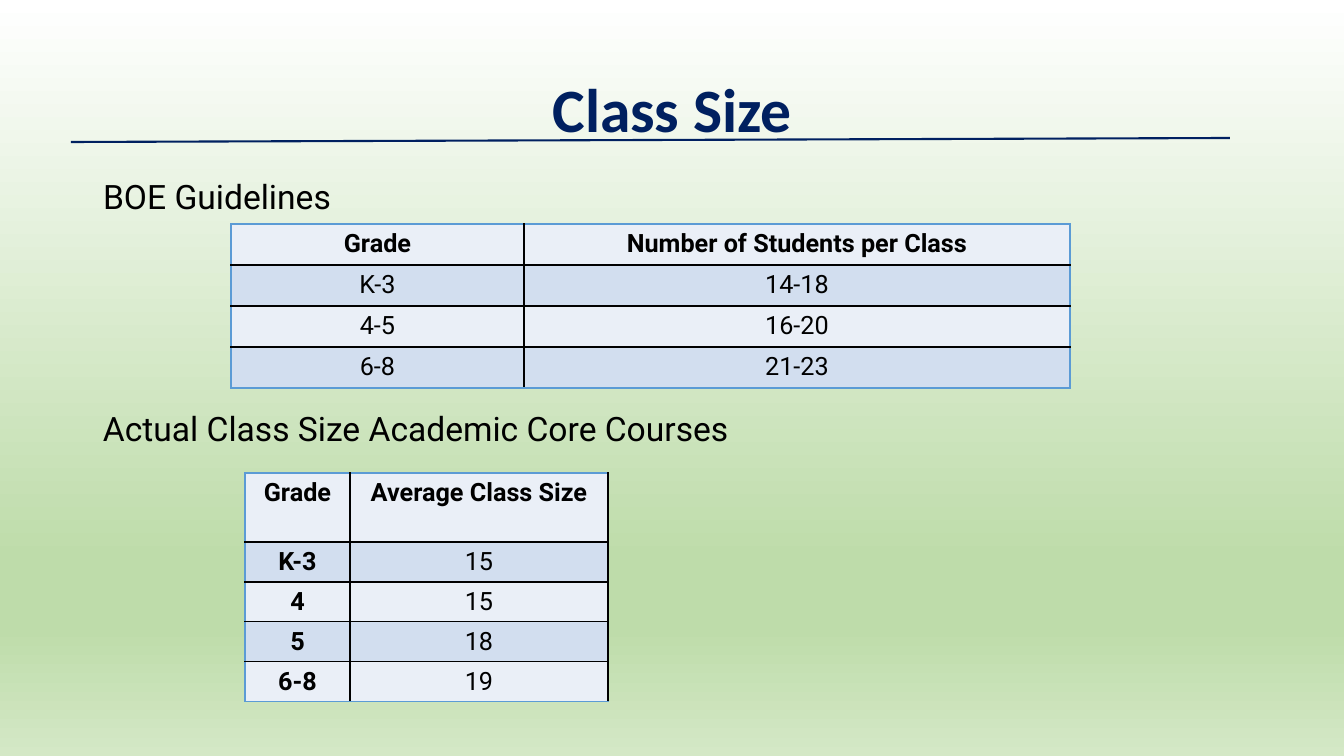
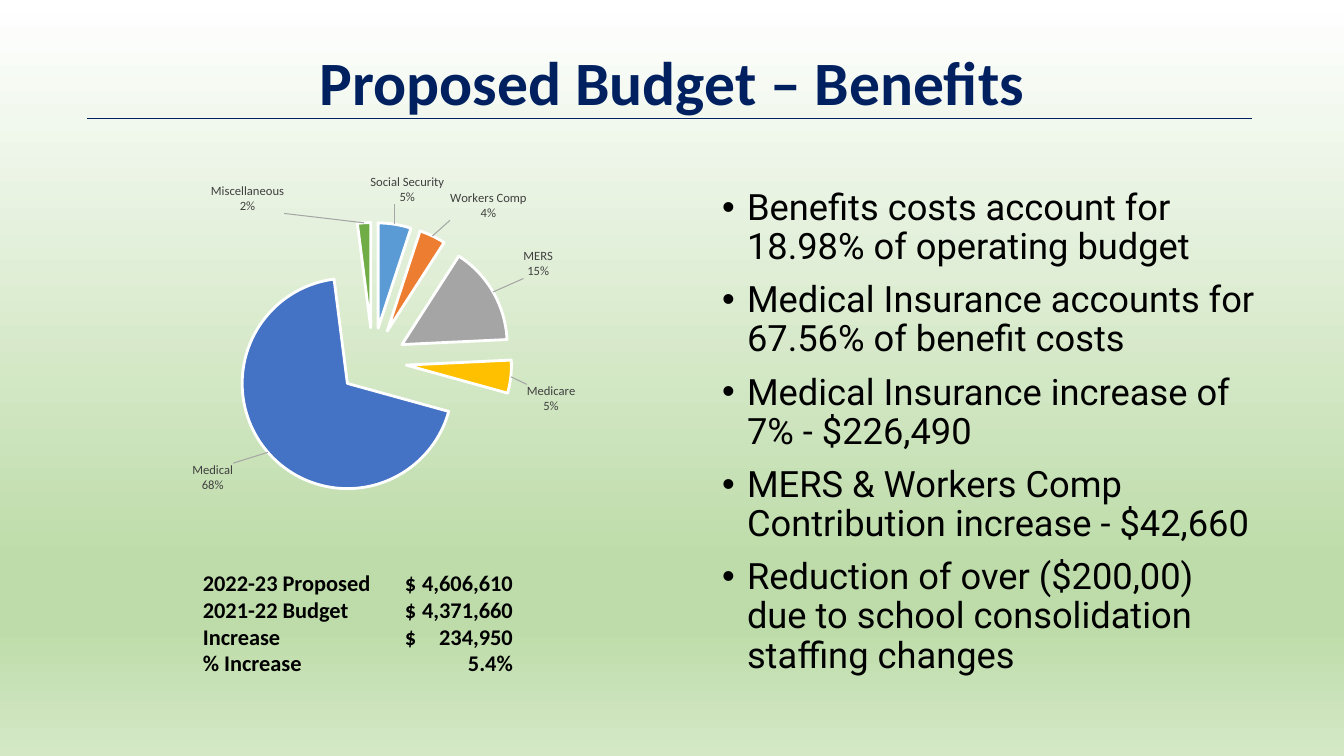
from copy import deepcopy
from dataclasses import dataclass
from typing import NamedTuple

from pptx import Presentation
from pptx.chart.data import CategoryChartData
from pptx.dml.color import RGBColor
from pptx.enum.chart import XL_CHART_TYPE as ChartType, XL_LABEL_POSITION as LabelPosition
from pptx.enum.shapes import MSO_CONNECTOR as Connector
from pptx.enum.text import MSO_ANCHOR as Anchor, MSO_AUTO_SIZE as AutoSize, PP_ALIGN as Align
from pptx.oxml import parse_xml
from pptx.oxml.ns import nsdecls, qn
from pptx.util import Pt

SLIDE_WIDTH, SLIDE_HEIGHT = 1344, 756
EMU_PER_PX = 12192000 / SLIDE_WIDTH


@dataclass(frozen=True)
class Theme:
    navy: str = "002060"
    black: str = "000000"
    white: str = "FFFFFF"
    label_gray: str = "404040"
    leader_gray: str = "A6A6A6"
    edge_blue: str = "5B9BD5"
    bands: tuple = ("EAEFF7", "D2DEEF")
    slices: tuple = ("5B9BD5", "ED7D31", "A5A5A5", "FFC000", "4472C4", "70AD47")
    backdrop: tuple = ((0, "FFFFFF"), (74, "BEDCAA"), (83, "BEDCAA"), (100, "D4E8C6"))
    heading_font: str = "Calibri"
    body_font: str = "Roboto"
    title_size: float = 44
    bullet_size: float = 25.9
    caption_size: float = 24
    table_size: float = 18
    summary_size: float = 16
    label_size: float = 9


THEME = Theme()


class Box(NamedTuple):
    left: int
    top: int
    width: int
    height: int


def px(length):
    return round(length * EMU_PER_PX)


def emu(box):
    return [px(length) for length in box]


def rgb(color):
    return RGBColor.from_string(color)


def element(tag, content="", **attributes):
    """Build one XML element of the a: or c: namespace."""
    listed = "".join(f' {name}="{value}"' for name, value in attributes.items())
    return parse_xml(f"<{tag} {nsdecls('a', 'c')}{listed}>{content}</{tag}>")


def solid(color):
    return f'<a:solidFill><a:srgbClr val="{color}"/></a:solidFill>'


def place(shape, box):
    shape.left, shape.top, shape.width, shape.height = emu(box)


def write(paragraph, text, size, font=THEME.body_font, color=THEME.black, bold=False,
          align=None, line_spacing=None, space_before=0):
    """Add text to a paragraph with its format."""
    paragraph.alignment = align
    paragraph.line_spacing = line_spacing
    paragraph.space_before = Pt(space_before)
    run = paragraph.add_run()
    run.text = text
    run.font.name, run.font.size, run.font.bold = font, Pt(size), bold
    run.font.color.rgb = rgb(color)


def paragraphs(frame, lines):
    """Pair each line with its paragraph in the frame."""
    for index, line in enumerate(lines):
        yield index, frame.paragraphs[0] if index == 0 else frame.add_paragraph(), line


# Shared parts

def set_backdrop(master):
    fill = master.background.fill
    fill.gradient()
    fill.gradient_angle = 270
    stops = master.element.find(".//" + qn("a:gsLst"))
    for stop in list(stops):
        stops.remove(stop)
    for percent, color in THEME.backdrop:
        stops.append(element("a:gs", f'<a:srgbClr val="{color}"/>', pos=percent * 1000))


def add_title(slide, box, text):
    title = slide.shapes.title
    place(title, box)
    title.text_frame.vertical_anchor = Anchor.MIDDLE
    title.text_frame.auto_size = AutoSize.NONE
    write(title.text_frame.paragraphs[0], text, THEME.title_size, font=THEME.heading_font,
          color=THEME.navy, bold=True, align=Align.CENTER, line_spacing=0.9)


def add_rule(slide, start, end, weight):
    rule = slide.shapes.add_connector(Connector.STRAIGHT, *emu(start + end))
    rule.line.color.rgb = rgb(THEME.navy)
    rule.line.width = Pt(weight)
    rule._element.spPr.append(element("a:effectLst"))


def fill_body(slide, box, lines, size, bulleted):
    body = slide.placeholders[1]
    place(body, box)
    body.text_frame.auto_size = AutoSize.NONE
    indent = px(25) if bulleted else 0
    for index, paragraph, line in paragraphs(body.text_frame, lines):
        properties = paragraph._p.get_or_add_pPr()
        properties.set("marL", str(indent))
        properties.set("indent", str(-indent))
        properties.append(element("a:buChar", char="•") if bulleted else element("a:buNone"))
        write(paragraph, line, size, line_spacing=0.9, space_before=10 if index else 0)


def add_text_box(slide, box):
    frame = slide.shapes.add_textbox(*emu(box)).text_frame
    frame.word_wrap = True
    return frame


# Tables

def set_borders(cell, colors):
    properties = cell._tc.get_or_add_tcPr()
    for index, (side, color) in enumerate(zip("LRTB", colors)):
        properties.insert(index, element(f"a:ln{side}", solid(color), w=Pt(1)))


def add_grid(slide, box, rows, widths, header_height, right_edge, bold_labels=False):
    """Draw a banded table with a bold header, black inner lines and a coloured outer edge."""
    last_row, last_column = len(rows) - 1, len(widths) - 1
    table = slide.shapes.add_table(len(rows), len(widths), *emu(box)).table
    table.horz_banding = False
    for column, width in zip(table.columns, widths):
        column.width = px(width)
    row_height = (box.height - header_height) / last_row
    for r, values in enumerate(rows):
        table.rows[r].height = px(row_height if r else header_height)
        for c, value in enumerate(values):
            cell = table.cell(r, c)
            cell.fill.solid()
            cell.fill.fore_color.rgb = rgb(THEME.bands[r % 2])
            set_borders(cell, (
                THEME.black if c else THEME.edge_blue,
                right_edge if c == last_column else THEME.black,
                THEME.black if r else THEME.edge_blue,
                THEME.edge_blue if r == last_row else THEME.black))
            write(cell.text_frame.paragraphs[0], value, THEME.table_size,
                  bold=r == 0 or (bold_labels and c == 0), align=Align.CENTER)


# Pie chart

def manual_layout(x, y, extra=""):
    return f'<c:manualLayout>{extra}<c:x val="{x:.2f}"/><c:y val="{y:.2f}"/>'


def add_pie(slide, box, plot, shares):
    """Draw an exploded pie; shares hold a name, a percentage and the label's shift."""
    data = CategoryChartData()
    data.categories = [name for name, _, _ in shares]
    data.add_series("Series 1", [value for _, value, _ in shares])
    chart = slide.shapes.add_chart(ChartType.PIE, *emu(box), data).chart
    chart.has_title = chart.has_legend = False
    chart.font.name, chart.font.size = THEME.heading_font, Pt(10)
    chart.plots[0].vary_by_categories = True

    # Plot area
    modes = ('<c:layoutTarget val="inner"/><c:xMode val="edge"/><c:yMode val="edge"/>')
    area = chart._chartSpace.find(".//" + qn("c:plotArea"))
    for old in area.findall(qn("c:layout")):
        area.remove(old)
    area.insert(0, element("c:layout", manual_layout(plot.left / box.width, plot.top / box.height, modes)
                           + f'<c:w val="{plot.width / box.width:.2f}"/>'
                           + f'<c:h val="{plot.height / box.height:.2f}"/></c:manualLayout>'))

    # Slices
    series = chart.plots[0].series[0]
    for index, color in enumerate(THEME.slices):
        look = series.points[index].format
        look.fill.solid()
        look.fill.fore_color.rgb = rgb(color)
        look.line.color.rgb = rgb(THEME.white)
        look.line.width = Pt(2)
    series._element.find(qn("c:dPt")).addprevious(element("c:explosion", val=32))

    # Labels with leader lines
    labels = series.data_labels
    labels.show_category_name = labels.show_value = True
    labels.number_format, labels.number_format_is_linked = '0"%"', False
    labels.position = LabelPosition.OUTSIDE_END
    labels.font.name, labels.font.size = THEME.heading_font, Pt(THEME.label_size)
    labels.font.color.rgb = rgb(THEME.label_gray)
    root = labels._element
    leader = root.find(qn("c:showLeaderLines"))
    leader.addprevious(element("c:separator", "\n"))
    leader.addnext(element("c:leaderLines",
                           f'<c:spPr><a:ln w="{Pt(0.75)}">{solid(THEME.leader_gray)}</a:ln></c:spPr>'))
    shared = [child for child in root if "eaderLines" not in child.tag]
    for index, (_, _, (across, down)) in enumerate(shares):
        shift = manual_layout(across / box.width, down / box.height) + "</c:manualLayout>"
        label = element("c:dLbl", f'<c:idx val="{index}"/><c:layout>{shift}</c:layout>')
        label.extend(deepcopy(child) for child in shared)
        root.insert(index, label)


def add_summary(slide, box, lines):
    """List amounts with the currency sign and the figure on tab stops."""
    for _, paragraph, line in paragraphs(add_text_box(slide, box), lines):
        stops = "".join(f'<a:tab pos="{px(at)}" algn="{side}"/>' for at, side in ((202, "l"), (310, "r")))
        paragraph._p.get_or_add_pPr().append(element("a:tabLst", stops))
        write(paragraph, "\t".join(line), THEME.summary_size, font=THEME.heading_font, bold=True)


# Slides

def build_class_size(slide):
    add_title(slide, Box(93, 40, 1159, 146), "Class Size")
    fill_body(slide, Box(93, 175, 1159, 260), ["BOE Guidelines"], THEME.caption_size, bulleted=False)
    add_rule(slide, (71, 142), (1230, 138), 1.5)
    add_grid(slide, Box(231, 224, 839, 164), [
        ("Grade", "Number of Students per Class"),
        ("K-3", "14-18"), ("4-5", "16-20"), ("6-8", "21-23"),
    ], widths=(293, 546), header_height=41, right_edge=THEME.edge_blue)
    add_grid(slide, Box(245, 473, 363, 229), [
        ("Grade", "Average Class Size"),
        ("K-3", "15"), ("4", "15"), ("5", "18"), ("6-8", "19"),
    ], widths=(105, 258), header_height=69, right_edge=THEME.black, bold_labels=True)
    caption = add_text_box(slide, Box(93, 403, 680, 50))
    write(caption.paragraphs[0], "Actual Class Size Academic Core Courses", THEME.caption_size)


def build_benefits(slide):
    add_title(slide, Box(93, 40, 1159, 91), "Proposed Budget – Benefits")
    fill_body(slide, Box(712, 184, 554, 499), [
        "Benefits costs account for 18.98% of operating budget",
        "Medical Insurance accounts for 67.56% of benefit costs",
        "Medical Insurance increase of 7% - $226,490",
        "MERS & Workers Comp Contribution increase - $42,660",
        "Reduction of over ($200,00) due to school consolidation staffing changes",
    ], THEME.bullet_size, bulleted=True)
    add_summary(slide, Box(193, 564, 446, 122), [
        ("2022-23 Proposed", "$", "4,606,610"),
        ("2021-22 Budget", "$", "4,371,660"),
        ("Increase", "$", "234,950"),
        ("% Increase", "", "5.4%"),
    ])
    add_rule(slide, (87, 118), (1252, 118), 0.5)
    add_pie(slide, Box(133, 172, 505, 351), Box(102, 50, 280, 280), [
        ("Social Security", 5, (-25, -14)),
        ("Workers Comp", 4, (15, -9)),
        ("MERS", 15, (27, -12)),
        ("Medicare", 5, (12, 6)),
        ("Medical", 68, (-30, 7)),
        ("Miscellaneous", 2, (-117, -3)),
    ])


def main():
    presentation = Presentation()
    presentation.slide_width, presentation.slide_height = px(SLIDE_WIDTH), px(SLIDE_HEIGHT)
    set_backdrop(presentation.slide_master)
    for build in (build_class_size, build_benefits):
        build(presentation.slides.add_slide(presentation.slide_layouts[1]))
    presentation.save("out.pptx")


if __name__ == "__main__":
    main()
